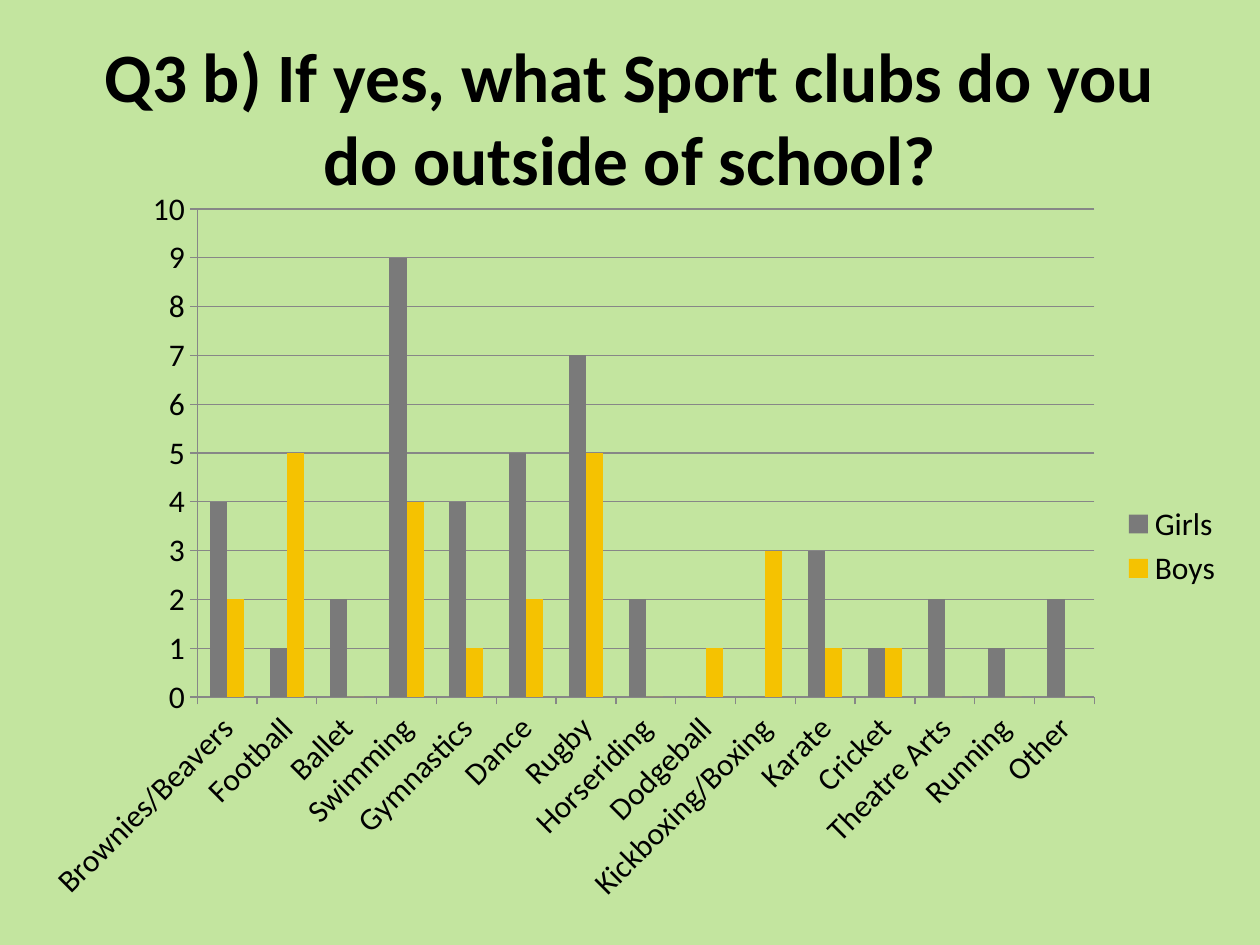
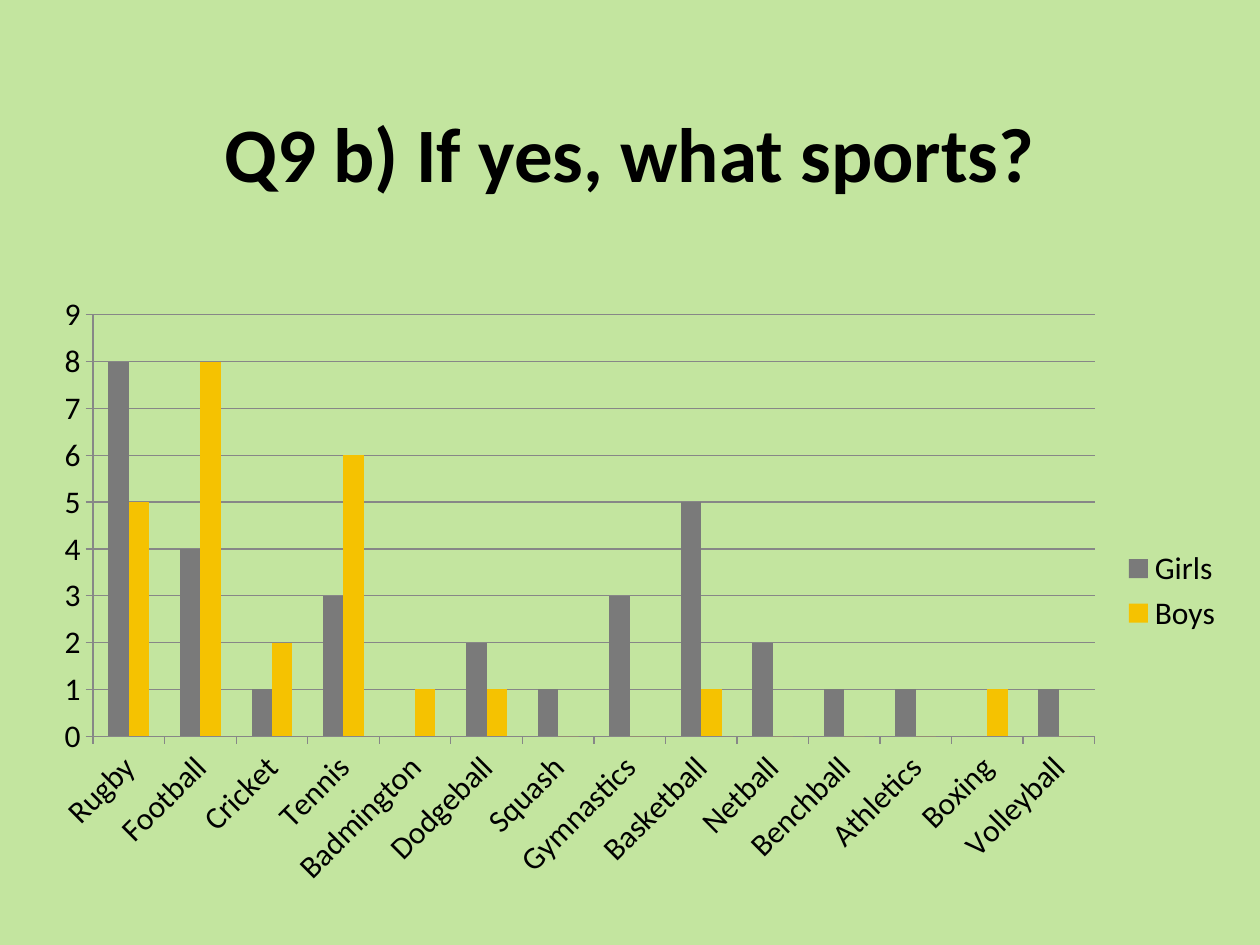
from dataclasses import dataclass

from pptx import Presentation
from pptx.chart.data import CategoryChartData
from pptx.dml.color import RGBColor
from pptx.enum.chart import XL_CHART_TYPE as ChartType
from pptx.enum.chart import XL_LEGEND_POSITION as LegendPos
from pptx.enum.chart import XL_TICK_MARK as Tick
from pptx.enum.text import MSO_ANCHOR, MSO_AUTO_SIZE, PP_ALIGN
from pptx.util import Inches, Pt

# Each sport is followed by the number of girls and of boys.
SLIDES = [
    {
        "title": "Q3 b) If yes, what Sport clubs do you do outside of school?",
        "title_size": 39.6,
        "title_height": 1.25,
        "chart_box": (0.2, 1.39, 9.61, 5.89),
        "sports": [
            ("Brownies/Beavers", 4, 2), ("Football", 1, 5), ("Ballet", 2, 0),
            ("Swimming", 9, 4), ("Gymnastics", 4, 1), ("Dance", 5, 2),
            ("Rugby", 7, 5), ("Horseriding", 2, 0), ("Dodgeball", 0, 1),
            ("Kickboxing/Boxing", 0, 3), ("Karate", 3, 1), ("Cricket", 1, 1),
            ("Theatre Arts", 2, 0), ("Running", 1, 0), ("Other", 2, 0),
        ],
    },
    {
        "title": "Q9 b) If yes, what sports?",
        "title_size": 44,
        "title_height": 1.8,
        "chart_box": (0.28, 2.25, 9.53, 4.88),
        "sports": [
            ("Rugby", 8, 5), ("Football", 4, 8), ("Cricket", 1, 2),
            ("Tennis", 3, 6), ("Badmington", 0, 1), ("Dodgeball", 2, 1),
            ("Squash", 1, 0), ("Gymnastics", 3, 0), ("Basketball", 5, 1),
            ("Netball", 2, 0), ("Benchball", 1, 0), ("Athletics", 1, 0),
            ("Boxing", 0, 1), ("Volleyball", 1, 0),
        ],
    },
]


@dataclass(frozen=True)
class Theme:
    font: str = "Calibri"
    background: str = "C3E59F"
    text: str = "000000"
    girls: str = "7A7A7A"
    boys: str = "F5C201"
    rule: str = "878787"
    rule_width: float = 0.75
    chart_size: float = 18
    title_left: float = 0.5
    title_top: float = 0.3
    gap: int = 150


THEME = Theme()


def rgb(value):
    return RGBColor.from_string(value)


def style_font(font, size, bold=False):
    font.name = THEME.font
    font.size = Pt(size)
    font.bold = bold
    font.color.rgb = rgb(THEME.text)


def style_line(line):
    line.color.rgb = rgb(THEME.rule)
    line.width = Pt(THEME.rule_width)


def set_title(slide, content, slide_width):
    title = slide.shapes.title
    left = Inches(THEME.title_left)
    title.left, title.top = left, Inches(THEME.title_top)
    title.width = slide_width - 2 * left
    title.height = Inches(content["title_height"])
    tf = title.text_frame
    tf.text = content["title"]
    tf.word_wrap = True
    tf.auto_size = MSO_AUTO_SIZE.NONE
    tf.vertical_anchor = MSO_ANCHOR.MIDDLE
    p = tf.paragraphs[0]
    p.alignment = PP_ALIGN.CENTER
    style_font(p.runs[0].font, content["title_size"], bold=True)


def add_sports_chart(slide, content):
    sports, girls, boys = zip(*content["sports"])
    data = CategoryChartData(number_format="General")
    data.categories = sports
    data.add_series("Girls", girls)
    data.add_series("Boys", boys)
    box = [Inches(v) for v in content["chart_box"]]
    chart = slide.shapes.add_chart(ChartType.COLUMN_CLUSTERED, *box, data).chart

    chart.has_title = False
    style_font(chart.font, THEME.chart_size)
    chart.has_legend = True
    chart.legend.position = LegendPos.RIGHT
    chart.legend.include_in_layout = False

    plot = chart.plots[0]
    plot.gap_width = THEME.gap
    plot.overlap = 0
    plot.vary_by_categories = False
    for series, color in zip(plot.series, (THEME.girls, THEME.boys)):
        series.format.fill.solid()
        series.format.fill.fore_color.rgb = rgb(color)

    for axis in (chart.category_axis, chart.value_axis):
        axis.major_tick_mark = Tick.OUTSIDE
        axis.minor_tick_mark = Tick.NONE
        style_line(axis.format.line)
    chart.value_axis.has_major_gridlines = True
    style_line(chart.value_axis.major_gridlines.format.line)


def main():
    prs = Presentation()
    prs.slide_width, prs.slide_height = Inches(10), Inches(7.5)
    fill = prs.slide_master.background.fill
    fill.solid()
    fill.fore_color.rgb = rgb(THEME.background)
    title_only = prs.slide_layouts.get_by_name("Title Only")
    for content in SLIDES:
        slide = prs.slides.add_slide(title_only)
        set_title(slide, content, prs.slide_width)
        add_sports_chart(slide, content)
    prs.save("out.pptx")


if __name__ == "__main__":
    main()
